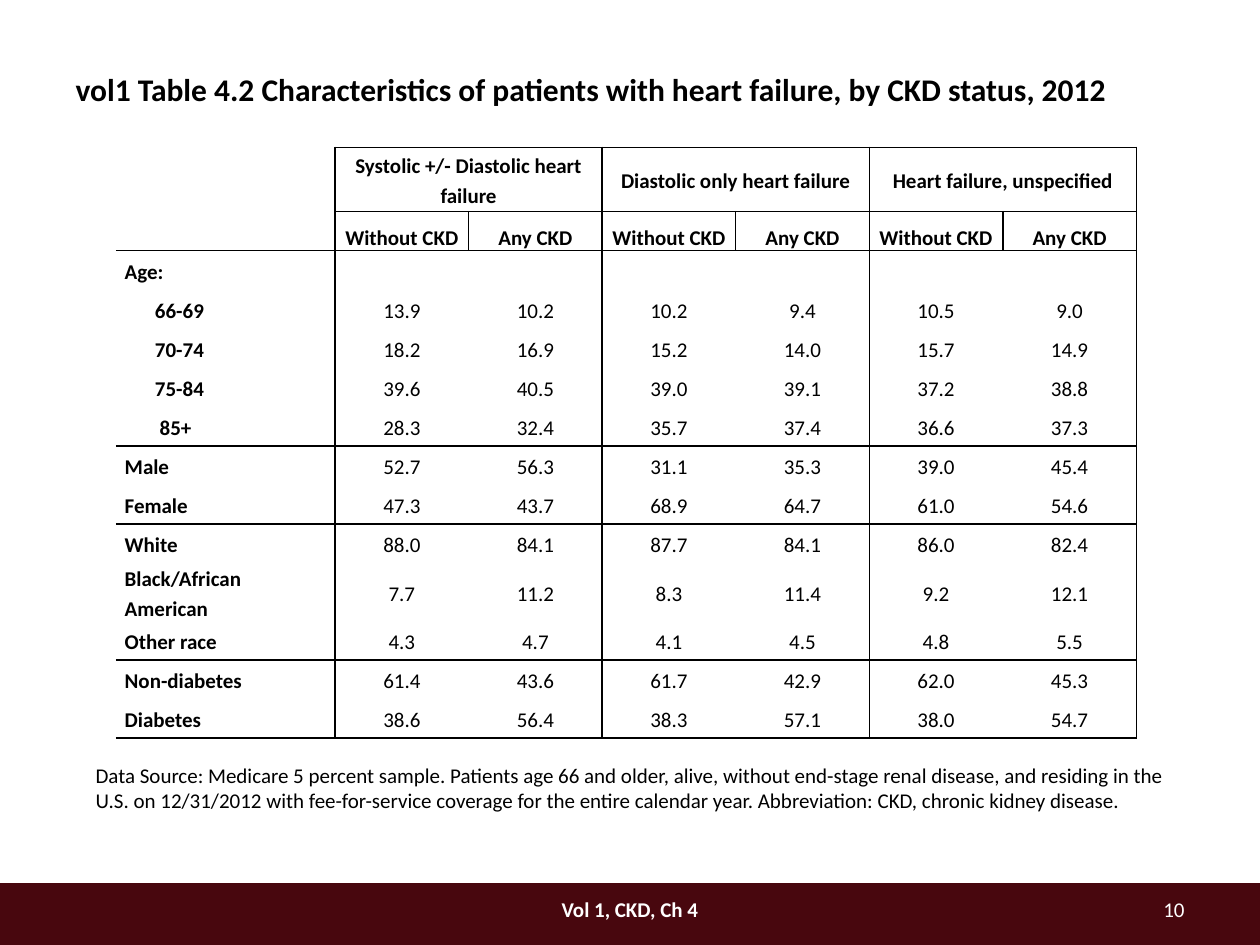
from pptx import Presentation
from pptx.dml.color import RGBColor
from pptx.enum.shapes import MSO_SHAPE
from pptx.enum.text import MSO_ANCHOR, MSO_AUTO_SIZE, PP_ALIGN
from pptx.oxml import parse_xml
from pptx.oxml.ns import nsdecls
from pptx.util import Emu, Inches, Pt

LEFT, CENTER, RIGHT = PP_ALIGN.LEFT, PP_ALIGN.CENTER, PP_ALIGN.RIGHT
MIDDLE, BOTTOM = MSO_ANCHOR.MIDDLE, MSO_ANCHOR.BOTTOM
RECTANGLE = MSO_SHAPE.RECTANGLE
FIT_SHAPE = MSO_AUTO_SIZE.SHAPE_TO_FIT_TEXT

SLIDE_WIDTH, SLIDE_HEIGHT = Inches(10), Inches(7.5)
COLUMN, ROW = SLIDE_WIDTH / 100, SLIDE_HEIGHT / 75
BLACK, WHITE, MAROON = "000000", "FFFFFF", "48070E"

TITLE = "vol1 Table 4.2 Characteristics of patients with heart failure, by CKD status, 2012"
SOURCE = (
    "Data Source: Medicare 5 percent sample. Patients age 66 and older, alive, "
    "without end-stage renal disease, and residing in the U.S. on 12/31/2012 with "
    "fee-for-service coverage for the entire calendar year. Abbreviation: CKD, "
    "chronic kidney disease."
)
GROUPS = ["Systolic +/- Diastolic heart failure", "Diastolic only heart failure",
          "Heart failure, unspecified"]
STATUSES = ["Without CKD", "Any CKD"]
PATIENTS = [
    ("Age:", []),
    ("66-69", ["13.9", "10.2", "10.2", "9.4", "10.5", "9.0"]),
    ("70-74", ["18.2", "16.9", "15.2", "14.0", "15.7", "14.9"]),
    ("75-84", ["39.6", "40.5", "39.0", "39.1", "37.2", "38.8"]),
    (" 85+", ["28.3", "32.4", "35.7", "37.4", "36.6", "37.3"]),
    ("Male", ["52.7", "56.3", "31.1", "35.3", "39.0", "45.4"]),
    ("Female", ["47.3", "43.7", "68.9", "64.7", "61.0", "54.6"]),
    ("White", ["88.0", "84.1", "87.7", "84.1", "86.0", "82.4"]),
    ("Black/African American", ["7.7", "11.2", "8.3", "11.4", "9.2", "12.1"]),
    ("Other race", ["4.3", "4.7", "4.1", "4.5", "4.8", "5.5"]),
    ("Non-diabetes", ["61.4", "43.6", "61.7", "42.9", "62.0", "45.3"]),
    ("Diabetes", ["38.6", "56.4", "38.3", "57.1", "38.0", "54.7"]),
]
AGE_BANDS = [label for label, _ in PATIENTS[1:5]]
WIDE_LABELS = AGE_BANDS + ["Black/African American", "Other race", "Non-diabetes"]
LABEL_COLUMNS, HEADER_ROWS = 2, 2
COLUMN_SHARES = [8.2, 9.2] + [10.6] * 6
ROW_SHARES = [5.1] + [3.1] * 13
GROUP_EDGES = {2, 4, 6, 8}
SECTION_EDGES = {2, 7, 9, 12, 14}


def color(value):
    """Return the colour of a hex string."""
    return RGBColor.from_string(value)


def grid_box(left, top, width, height):
    """Turn grid columns and rows into a box in slide units."""
    return (Emu(round(left * COLUMN)), Emu(round(top * ROW)),
            Emu(round(width * COLUMN)), Emu(round(height * ROW)))


def write(frame, text, size=12, bold=False, shade=BLACK, align=LEFT):
    """Write one formatted paragraph into a text frame and return it."""
    frame.word_wrap = True
    paragraph = frame.paragraphs[0]
    paragraph.text = text
    paragraph.alignment = align
    paragraph.font.name = "Calibri"
    paragraph.font.size = Pt(size)
    paragraph.font.bold = bold
    paragraph.font.color.rgb = color(shade)
    return paragraph


def add_text(slide, box, text, anchor=MIDDLE, **style):
    """Add a text box to the slide and return its frame."""
    frame = slide.shapes.add_textbox(*box).text_frame
    frame.vertical_anchor = anchor
    write(frame, text, **style)
    return frame


def add_title(slide, box):
    """Place the slide title."""
    title = slide.shapes.title
    title.left, title.top, title.width, title.height = box
    title.text_frame.vertical_anchor = MIDDLE
    write(title.text_frame, TITLE, size=18, bold=True)


def add_footer(slide, box):
    """Draw the footer band with its chapter name and page number."""
    left, top, width, height = box
    band = slide.shapes.add_shape(RECTANGLE, *box)
    band.shadow.inherit = False
    band.fill.solid()
    band.fill.fore_color.rgb = color(MAROON)
    band.line.fill.background()
    text_top, text_height = top + round(0.14 * height), round(0.54 * height)
    for share, width_share, text, bold, align in [
        (0.34, 0.32, "Vol 1, CKD, Ch 4", True, CENTER),
        (0.82, 0.13, "10", False, RIGHT),
    ]:
        text_box = (left + round(share * width), text_top,
                    round(width_share * width), text_height)
        add_text(slide, text_box, text, bold=bold, shade=WHITE, align=align)


def write_cell(cell, text, anchor=MIDDLE, indent=0, **style):
    """Write a table cell with tight margins and no fill."""
    cell.fill.background()
    cell.margin_left = cell.margin_right = Inches(0.07)
    cell.margin_top = cell.margin_bottom = 0
    cell.vertical_anchor = anchor
    paragraph = write(cell.text_frame, text, **style)
    paragraph.line_spacing = 1.15
    if indent:
        paragraph._p.get_or_add_pPr().set("marL", str(Inches(indent)))


def has_vertical_edge(row, edge):
    """Tell whether a row has a rule at a column edge."""
    return edge in GROUP_EDGES or (row == 1 and edge > LABEL_COLUMNS)


def has_horizontal_edge(column, edge):
    """Tell whether a column has a rule at a row edge."""
    return edge in SECTION_EDGES or (edge < HEADER_ROWS and column >= LABEL_COLUMNS)


def rule_cell(cell, row, column):
    """Draw the rules that fall on the sides of a cell."""
    right_edge = column + (cell.span_width if cell.is_merge_origin else 1)
    sides = [
        ("lnL", has_vertical_edge(row, column)),
        ("lnR", has_vertical_edge(row, right_edge)),
        ("lnT", has_horizontal_edge(column, row)),
        ("lnB", has_horizontal_edge(column, row + 1)),
    ]
    properties = cell._tc.get_or_add_tcPr()
    for index, (side, ruled) in enumerate(sides):
        paint = (f'<a:solidFill><a:srgbClr val="{BLACK}"/></a:solidFill>'
                 if ruled else "<a:noFill/>")
        properties.insert(index, parse_xml(
            f'<a:{side} {nsdecls("a")} w="{Pt(1)}">{paint}</a:{side}>'))


def add_patient_table(slide, box):
    """Build the table of patient characteristics."""
    left, top, width, height = box
    table = slide.shapes.add_table(len(ROW_SHARES), len(COLUMN_SHARES), *box).table
    table.first_row = table.horz_banding = False
    for column, share in zip(table.columns, COLUMN_SHARES):
        column.width = round(width * share / sum(COLUMN_SHARES))
    for row, share in zip(table.rows, ROW_SHARES):
        row.height = round(height * share / sum(ROW_SHARES))
    for cell in table.iter_cells():
        write_cell(cell, "")

    for group, name in enumerate(GROUPS):
        first = LABEL_COLUMNS + group * len(STATUSES)
        table.cell(0, first).merge(table.cell(0, first + 1))
        write_cell(table.cell(0, first), name, bold=True, align=CENTER)
        for offset, status in enumerate(STATUSES):
            write_cell(table.cell(1, first + offset), status, anchor=BOTTOM,
                       bold=True, align=CENTER)

    for row, (label, values) in enumerate(PATIENTS, HEADER_ROWS):
        if label in WIDE_LABELS:
            table.cell(row, 0).merge(table.cell(row, 1))
        write_cell(table.cell(row, 0), label, bold=True,
                   indent=0.24 if label in AGE_BANDS else 0)
        for column, value in enumerate(values, LABEL_COLUMNS):
            write_cell(table.cell(row, column), value, align=CENTER)

    for row in range(len(ROW_SHARES)):
        for column in range(len(COLUMN_SHARES)):
            rule_cell(table.cell(row, column), row, column)


def add_source(slide, box):
    """Place the data source note below the table."""
    frame = add_text(slide, box, SOURCE, anchor=MSO_ANCHOR.TOP)
    frame.auto_size = FIT_SHAPE


def main():
    """Build and save the presentation."""
    presentation = Presentation()
    presentation.slide_width, presentation.slide_height = SLIDE_WIDTH, SLIDE_HEIGHT
    slide = presentation.slides.add_slide(presentation.slide_layouts[5])
    add_footer(slide, grid_box(0, 70.1, 100, 5))
    add_title(slide, grid_box(5, 3.3, 90, 7.5))
    add_patient_table(slide, grid_box(9.2, 11.7, 81, 45.4))
    add_source(slide, grid_box(6.6, 60, 89.2, 5))
    presentation.save("out.pptx")


if __name__ == "__main__":
    main()
